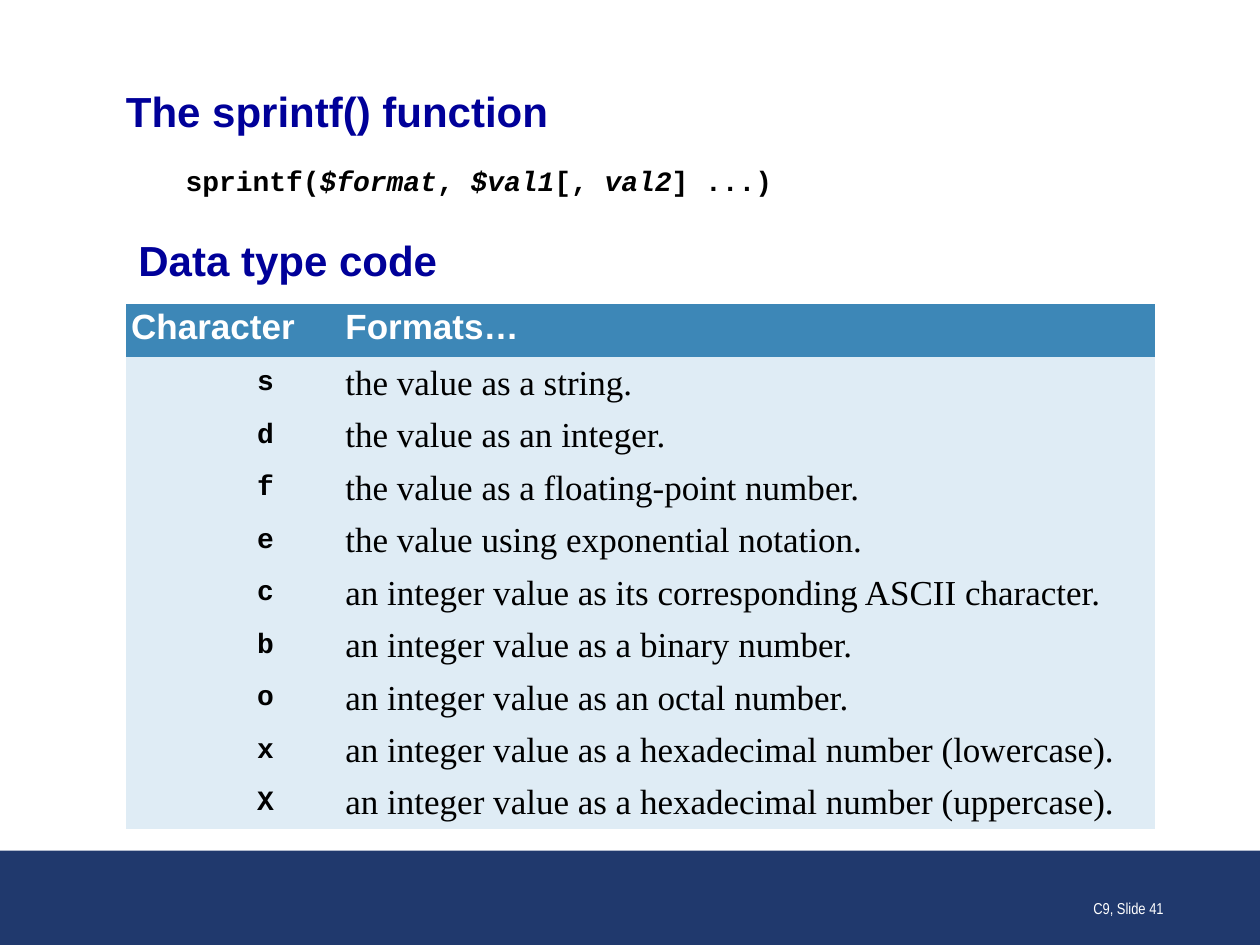
from dataclasses import dataclass

from lxml import etree
from pptx import Presentation
from pptx.dml.color import RGBColor
from pptx.enum.shapes import MSO_SHAPE
from pptx.enum.text import MSO_ANCHOR as Anchor, PP_ALIGN as Align
from pptx.oxml.ns import qn
from pptx.util import Pt

NAVY = RGBColor(0x20, 0x39, 0x6D)
HEADING_BLUE = RGBColor(0x00, 0x00, 0x99)
HEADER_FILL = RGBColor(0x3D, 0x87, 0xB7)
ROW_FILL = RGBColor(0xDF, 0xEC, 0xF5)
WHITE = RGBColor(0xFF, 0xFF, 0xFF)
BLACK = RGBColor(0x00, 0x00, 0x00)


@dataclass(frozen=True)
class Style:
    font: str
    size: float
    color: RGBColor
    bold: bool = False


@dataclass(frozen=True)
class FormatCode:
    character: str
    meaning: str


HEADING = Style("Arial", 24, HEADING_BLUE, True)
CODE = Style("Courier New", 16, BLACK, True)
TABLE_HEADER = Style("Arial", 20, WHITE, True)
MEANING = Style("Times New Roman", 20, BLACK)
FOOTER = Style("Arial Narrow", 9, WHITE)

SYNTAX = [("sprintf(", False), ("$format", True), (", ", False), ("$val1", True),
          ("[, ", False), ("val2", True), ("] ...)", False)]

FORMAT_CODES = [
    FormatCode("s", "the value as a string."),
    FormatCode("d", "the value as an integer."),
    FormatCode("f", "the value as a floating-point number."),
    FormatCode("e", "the value using exponential notation."),
    FormatCode("c", "an integer value as its corresponding ASCII character."),
    FormatCode("b", "an integer value as a binary number."),
    FormatCode("o", "an integer value as an octal number."),
    FormatCode("x", "an integer value as a hexadecimal number (lowercase)."),
    FormatCode("X", "an integer value as a hexadecimal number (uppercase)."),
]

ROW_HEIGHT = 30
COLUMN_WIDTHS = (122.4, 465.84)
CODE_TAB = 72


def add_run(paragraph, text: str, style: Style, italic: bool = False) -> None:
    run = paragraph.add_run()
    run.text = text
    run.font.name = style.font
    run.font.size = Pt(style.size)
    run.font.bold = style.bold
    run.font.italic = italic
    run.font.color.rgb = style.color


def add_text_frame(slide, left: float, top: float, width: float, height: float,
                   anchor: Anchor = Anchor.TOP):
    frame = slide.shapes.add_textbox(Pt(left), Pt(top), Pt(width), Pt(height)).text_frame
    frame.word_wrap = True
    frame.vertical_anchor = anchor
    return frame


def add_tab(paragraph, position: float) -> None:
    tabs = etree.SubElement(paragraph._p.get_or_add_pPr(), qn("a:tabLst"))
    etree.SubElement(tabs, qn("a:tab"), pos=str(Pt(position)), algn="l")


def fill_cell(cell, text: str, style: Style, fill: RGBColor, anchor: Anchor) -> None:
    cell.fill.solid()
    cell.fill.fore_color.rgb = fill
    cell.vertical_anchor = anchor
    cell.margin_left = cell.margin_right = Pt(3)
    cell.margin_top = cell.margin_bottom = Pt(2)
    paragraph = cell.text_frame.paragraphs[0]
    if text.startswith("\t"):
        add_tab(paragraph, CODE_TAB)
    add_run(paragraph, text, style)


def add_code_table(slide, left: float, top: float) -> None:
    row_count = len(FORMAT_CODES) + 1
    table = slide.shapes.add_table(
        row_count, len(COLUMN_WIDTHS), Pt(left), Pt(top),
        Pt(sum(COLUMN_WIDTHS)), Pt(row_count * ROW_HEIGHT)).table
    table.horz_banding = False
    # Plain grid style without cell borders
    table._tbl.tblPr.find(qn("a:tableStyleId")).text = "{2D5ABB26-0587-4C30-8999-92F81FD0307C}"
    for column, width in zip(table.columns, COLUMN_WIDTHS):
        column.width = Pt(width)
    for row in table.rows:
        row.height = Pt(ROW_HEIGHT)
    for column, label in enumerate(("Character", "Formats…")):
        fill_cell(table.cell(0, column), label, TABLE_HEADER, HEADER_FILL, Anchor.TOP)
    for row, code in enumerate(FORMAT_CODES, start=1):
        fill_cell(table.cell(row, 0), "\t" + code.character, CODE, ROW_FILL, Anchor.MIDDLE)
        fill_cell(table.cell(row, 1), code.meaning, MEANING, ROW_FILL, Anchor.MIDDLE)


def main() -> None:
    deck = Presentation()
    deck.slide_width, deck.slide_height = Pt(720), Pt(540)
    slide = deck.slides.add_slide(deck.slide_layouts[6])

    # Footer band and slide number
    band = slide.shapes.add_shape(MSO_SHAPE.RECTANGLE, Pt(0), Pt(486), Pt(720), Pt(54))
    band.shadow.inherit = False
    band.fill.solid()
    band.fill.fore_color.rgb = NAVY
    band.line.fill.background()
    footer = add_text_frame(slide, 522, 492, 150, 36, Anchor.BOTTOM).paragraphs[0]
    footer.alignment = Align.RIGHT
    add_run(footer, "C9, Slide 41", FOOTER)

    # Title
    title = add_text_frame(slide, 72, 49, 576, 29, Anchor.MIDDLE)
    title.margin_left = title.margin_right = title.margin_top = title.margin_bottom = Pt(0)
    add_run(title.paragraphs[0], "The sprintf() function", HEADING)

    # Function syntax and table heading
    body = add_text_frame(slide, 72, 90, 576, 42)
    syntax = body.paragraphs[0]
    syntax._p.get_or_add_pPr().set("marL", str(Pt(27)))
    syntax.space_after = Pt(6)
    for text, italic in SYNTAX:
        add_run(syntax, text, CODE, italic)
    table_heading = body.add_paragraph()
    table_heading.space_before = Pt(15)
    table_heading.space_after = Pt(6)
    add_run(table_heading, "Data type code", HEADING)

    # Data type codes
    add_code_table(slide, 72, 174)

    deck.save("out.pptx")


if __name__ == "__main__":
    main()
